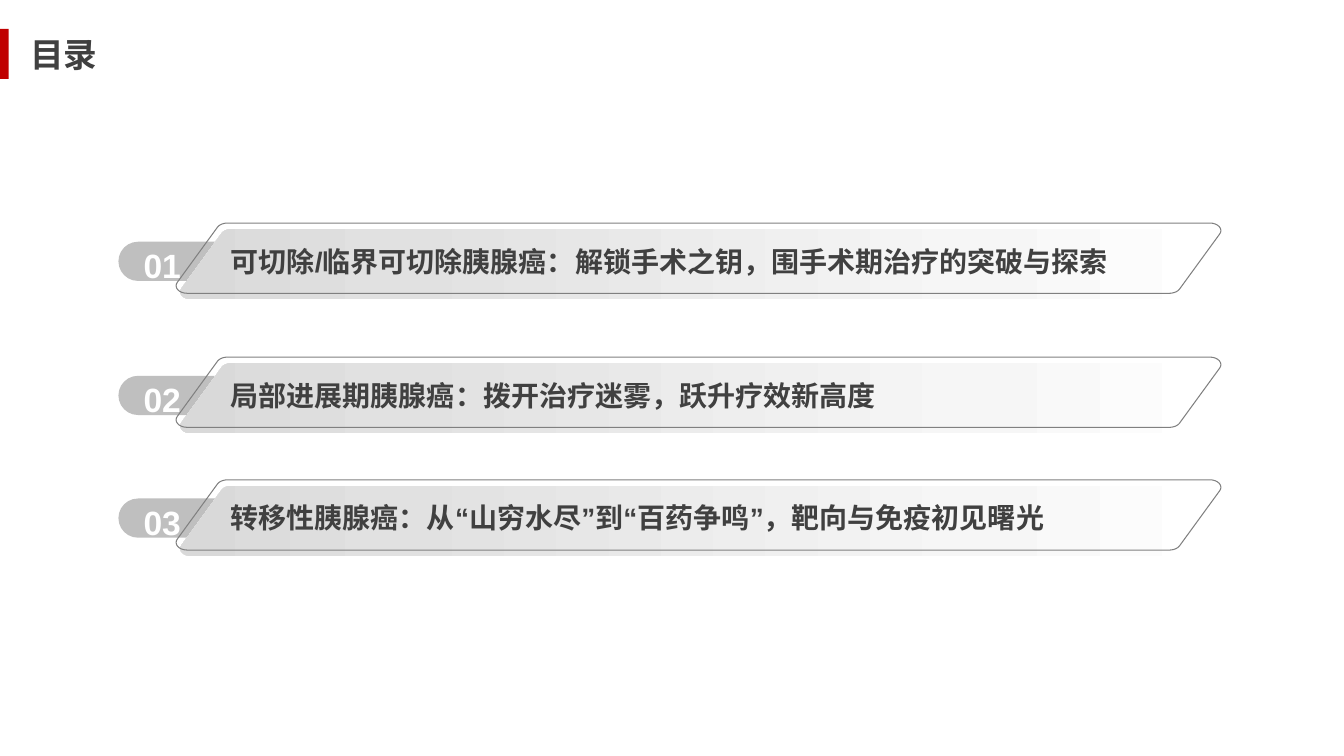
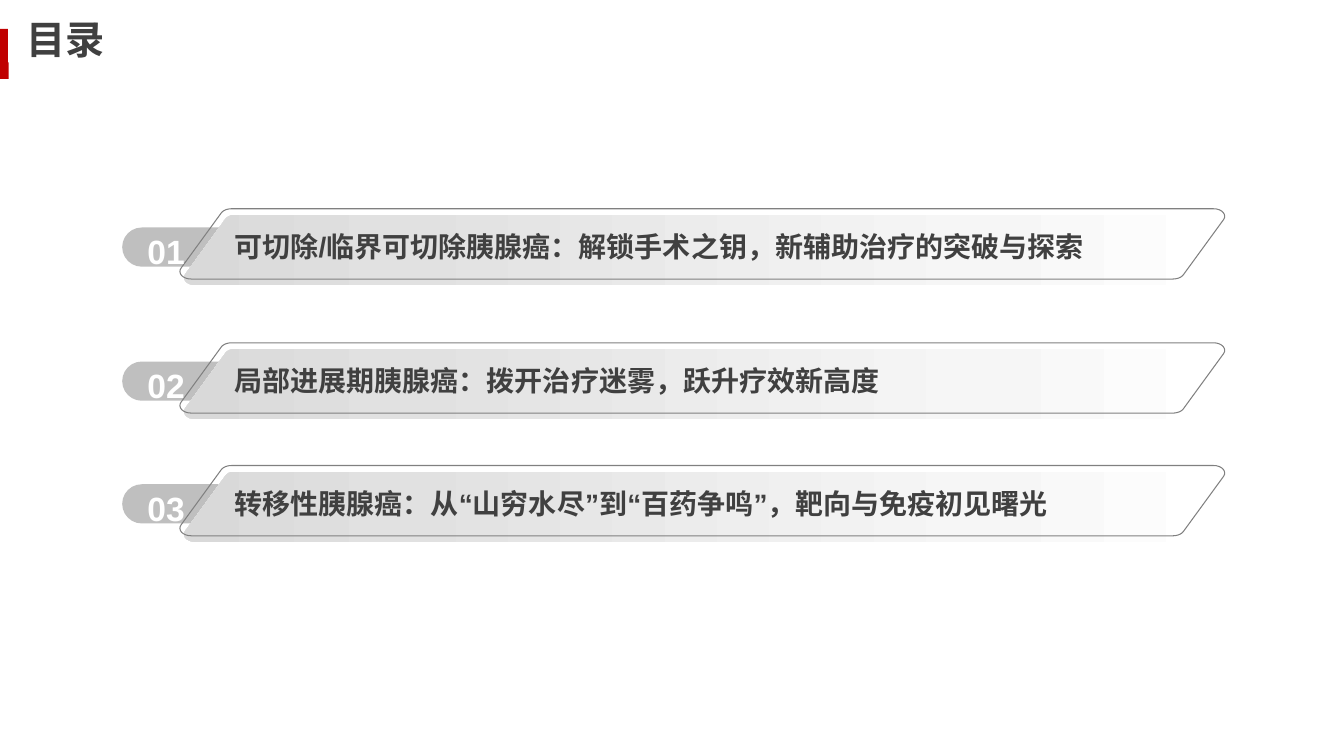
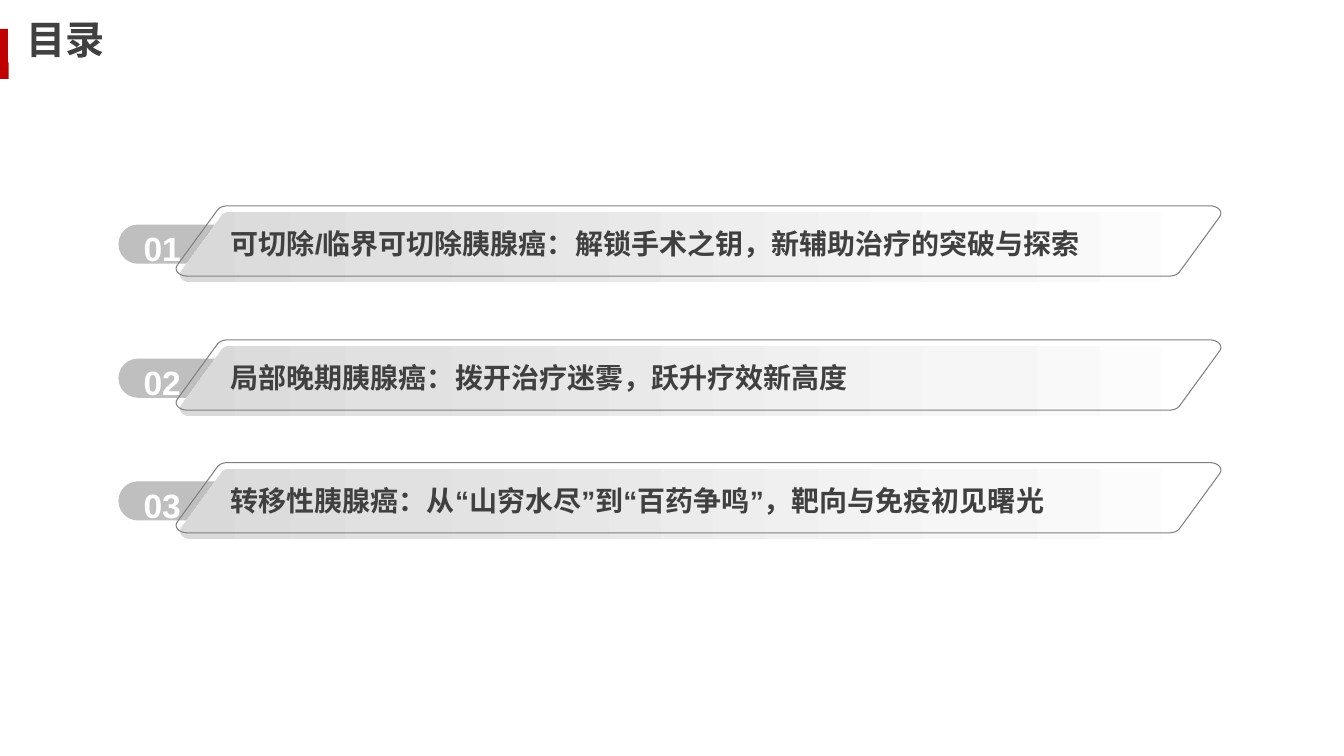
from dataclasses import dataclass
from typing import Any

from lxml import etree
from pptx import Presentation
from pptx import util as u
from pptx.dml.color import RGBColor
from pptx.enum import lang, shapes, text
from pptx.oxml import ns

RED = RGBColor(0xC0, 0x00, 0x00)
WHITE = RGBColor(0xFF, 0xFF, 0xFF)
INK = RGBColor(0x40, 0x40, 0x40)
PILL_GREY = RGBColor(0xBF, 0xBF, 0xBF)
EDGE_GREY = RGBColor(0x80, 0x80, 0x80)
BAND_STOPS = (
    (0, WHITE),
    (24, RGBColor(0xF6, 0xF6, 0xF6)),
    (79, RGBColor(0xE1, 0xE1, 0xE1)),
    (100, RGBColor(0xD9, 0xD9, 0xD9)),
)
FONT = "Arial"

BAND_WIDTH, BAND_HEIGHT = 745.9, 50.2
ROW_OFFSETS = (0, 95.76, 183.4)
CURVE_STEPS = 8

Point = tuple[float, float]


@dataclass(frozen=True)
class Box:
    left: float
    top: float
    width: float
    height: float

    def moved(self, dx: float, dy: float) -> "Box":
        return Box(self.left + dx, self.top + dy, self.width, self.height)

    def lengths(self) -> tuple[u.Pt, u.Pt, u.Pt, u.Pt]:
        return u.Pt(self.left), u.Pt(self.top), u.Pt(self.width), u.Pt(self.height)


@dataclass(frozen=True)
class Heading:
    box: Box
    size: float
    align: text.PP_ALIGN


@dataclass(frozen=True)
class Agenda:
    heading: Heading
    left: float
    top: float
    topics: tuple[str, str, str]


RED_BAR = Box(0, 20.6, 6.3, 35.8)
PILL = Box(-41.4, 13.4, 105.1, 28)
NUMBER = Box(-34.6, 10.1, 49, 31.7)
TOPIC = Box(31.7, 11.5, 682.6, 31.5)
SHADE_SHIFT = (3, 4.3)

WIDE_HEADING = Heading(Box(14.4, 18, 316.1, 41.8), 24, text.PP_ALIGN.LEFT)
SMALL_HEADING = Heading(Box(5.8, 11.5, 82.1, 33.1), 28, text.PP_ALIGN.CENTER)

NEOADJUVANT = "可切除/临界可切除胰腺癌：解锁手术之钥，新辅助治疗的突破与探索"
ADVANCED = "局部进展期胰腺癌：拨开治疗迷雾，跃升疗效新高度"
METASTATIC = "转移性胰腺癌：从“山穷水尽”到“百药争鸣”，靶向与免疫初见曙光"

AGENDAS = (
    Agenda(WIDE_HEADING, 126, 159.3, (
        "可切除/临界可切除胰腺癌：解锁手术之钥，围手术期治疗的突破与探索",
        ADVANCED,
        METASTATIC,
    )),
    Agenda(SMALL_HEADING, 128.7, 149.1, (NEOADJUVANT, ADVANCED, METASTATIC)),
    Agenda(SMALL_HEADING, 126, 147, (
        NEOADJUVANT,
        "局部晚期胰腺癌：拨开治疗迷雾，跃升疗效新高度",
        METASTATIC,
    )),
)


def curve(a: Point, b: Point, c: Point, d: Point) -> list[Point]:
    points = []
    for step in range(CURVE_STEPS + 1):
        t = step / CURVE_STEPS
        weights = ((1 - t) ** 3, 3 * t * (1 - t) ** 2, 3 * t * t * (1 - t), t ** 3)
        x, y = (sum(w * p[axis] for w, p in zip(weights, (a, b, c, d))) for axis in (0, 1))
        points.append((x, y))
    return points


def band_outline() -> list[Point]:
    half = curve((738, 0), (744.2, 0), (747.9, 4.3), (745.2, 7.9))
    half += curve((716.4, 47.4), (714.9, 49.2), (712, BAND_HEIGHT), (709, BAND_HEIGHT))
    return half + [(BAND_WIDTH - x, BAND_HEIGHT - y) for x, y in half]


def add_band(parent: Any, left: float, top: float) -> Any:
    first, *rest = [(u.Pt(left + x), u.Pt(top + y)) for x, y in band_outline()]
    builder = parent.build_freeform(*first)
    builder.add_line_segments(rest, close=True)
    band = builder.convert_to_shape()
    band.shadow.inherit = False
    return band


def fill_gradient(band: Any) -> None:
    band.fill.gradient()
    band.fill.gradient_angle = 180
    stops = next(band._element.iter(ns.qn("a:gsLst")))
    for old in list(stops):
        stops.remove(old)
    for percent, color in BAND_STOPS:
        stop = etree.SubElement(stops, ns.qn("a:gs"), pos=str(percent * 1000))
        etree.SubElement(stop, ns.qn("a:srgbClr"), val=str(color))


def add_block(parent: Any, kind: shapes.MSO_SHAPE, box: Box, color: RGBColor) -> Any:
    block = parent.add_shape(kind, *box.lengths())
    block.shadow.inherit = False
    block.fill.solid()
    block.fill.fore_color.rgb = color
    block.line.fill.background()
    return block


def write(frame: Any, words: str, size: float, color: RGBColor, align: text.PP_ALIGN) -> None:
    frame.word_wrap = True
    paragraph = frame.paragraphs[0]
    paragraph.alignment = align
    run = paragraph.add_run()
    run.text = words
    font = run.font
    font.name, font.size, font.bold = FONT, u.Pt(size), True
    font.color.rgb = color
    font.language_id = lang.MSO_LANGUAGE_ID.SIMPLIFIED_CHINESE
    etree.SubElement(font._element, ns.qn("a:ea"), typeface=FONT)


def add_topic(slide: Any, left: float, top: float, number: int, topic: str) -> None:
    row = slide.shapes.add_group_shape().shapes
    pill = add_block(row, shapes.MSO_SHAPE.ROUNDED_RECTANGLE, PILL.moved(left, top), PILL_GREY)
    pill.adjustments[0] = 0.5

    shade = add_band(row, left + SHADE_SHIFT[0], top + SHADE_SHIFT[1])
    fill_gradient(shade)
    shade.line.fill.background()

    edge = add_band(row, left, top)
    edge.fill.background()
    edge.line.color.rgb = EDGE_GREY
    edge.line.width = u.Pt(0.75)

    number_frame = row.add_textbox(*NUMBER.moved(left, top).lengths()).text_frame
    number_frame.margin_left = number_frame.margin_right = u.Pt(0)
    number_frame.margin_top = number_frame.margin_bottom = u.Pt(0)
    write(number_frame, f"{number:02d}", 24, WHITE, text.PP_ALIGN.CENTER)
    number_frame.paragraphs[0].line_spacing = 1.2

    topic_frame = row.add_textbox(*TOPIC.moved(left, top).lengths()).text_frame
    write(topic_frame, topic, 20, INK, text.PP_ALIGN.LEFT)
    for frame in (number_frame, topic_frame):
        frame.auto_size = text.MSO_AUTO_SIZE.SHAPE_TO_FIT_TEXT


def add_heading(slide: Any, heading: Heading) -> None:
    add_block(slide.shapes, shapes.MSO_SHAPE.RECTANGLE, RED_BAR, RED)
    title = add_block(slide.shapes, shapes.MSO_SHAPE.RECTANGLE, heading.box, WHITE)
    title.text_frame.vertical_anchor = text.MSO_ANCHOR.MIDDLE
    write(title.text_frame, "目录", heading.size, INK, heading.align)


def main() -> None:
    deck = Presentation()
    deck.slide_width, deck.slide_height = u.Pt(960), u.Pt(540)
    for agenda in AGENDAS:
        slide = deck.slides.add_slide(deck.slide_layouts[6])
        add_heading(slide, agenda.heading)
        for number, (offset, topic) in enumerate(zip(ROW_OFFSETS, agenda.topics), 1):
            add_topic(slide, agenda.left, agenda.top + offset, number, topic)
    deck.save("out.pptx")


if __name__ == "__main__":
    main()
